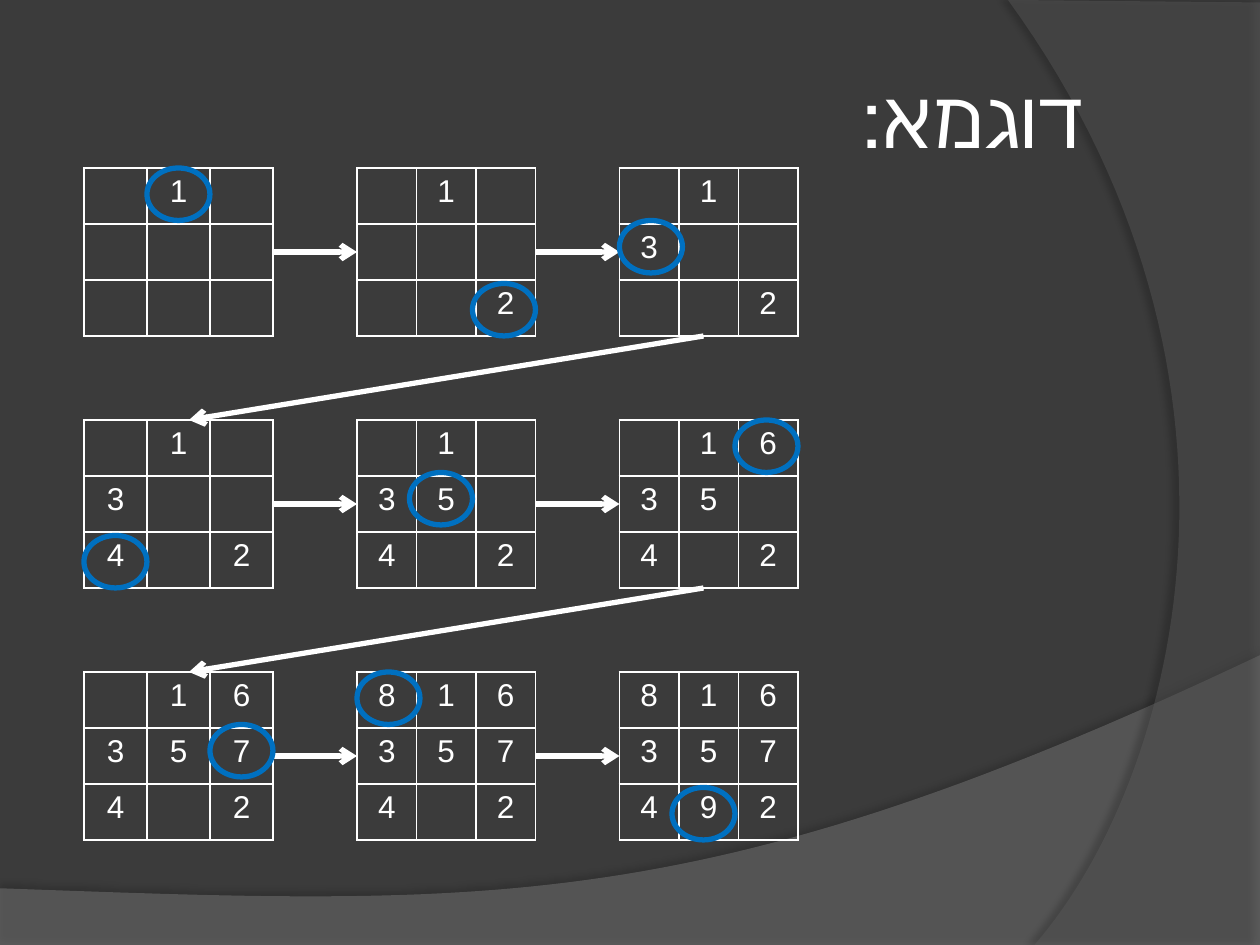
"""Build a slide that fills a three by three magic square one number at a time."""
import dataclasses
import typing

import lxml.etree
import pptx
import pptx.dml.color
import pptx.enum.shapes
import pptx.enum.text
import pptx.oxml
import pptx.oxml.ns
import pptx.util

Point = typing.Tuple[float, float]
GRID_COLUMNS, GRID_ROWS = 120, 90
SLIDE_WIDTH, SLIDE_HEIGHT = pptx.util.Inches(10), pptx.util.Inches(7.5)


@dataclasses.dataclass(frozen=True)
class Theme:
    background: str = "3B3B3B"
    wave: str = "7F7F7F"
    arc: str = "5E5E5E"
    shadow: str = "000000"
    ink: str = "FFFFFF"
    ring: str = "0070C0"
    font: str = "Arial"
    title_size: float = 46
    number_size: float = 18
    border_width: float = 1
    line_width: float = 3


@dataclasses.dataclass(frozen=True)
class Board:
    left: int
    top: int
    width: int
    count: int
    height: int = 16

    @property
    def right(self) -> int:
        return self.left + self.width

    @property
    def middle(self) -> int:
        return self.top + self.height // 2

    @property
    def bottom(self) -> int:
        return self.top + self.height


@dataclasses.dataclass(frozen=True)
class Backdrop:
    corners: typing.Tuple[Point, ...]
    curve: typing.Tuple[Point, Point, Point, Point]
    color: str
    alpha: int
    shadow_alpha: int
    shadow_distance: float
    shadow_angle: int


THEME = Theme()
BOARD_COLUMNS = ((8, 18), (34, 17), (59, 17))
BOARD_TOPS = (16, 40, 64)
NUMBER_CELLS = ((0, 1), (2, 2), (1, 0), (2, 0), (1, 1), (0, 2), (1, 2), (0, 0), (2, 1))
RING_WIDTH, RING_HEIGHT = 6, 5
BACKDROPS = (
    Backdrop(((0, 7.51), (10, 7.51)), ((10, 5.2), (5.59, 7.29), (3.91, 7.19), (0, 7.05)),
             THEME.wave, 45, 35, 3.5, 270),
    Backdrop(((10, 0.02), (10, 7.5)), ((8.21, 7.5), (9.35, 6.19), (10.18, 3), (8, 0)),
             THEME.arc, 40, 45, 4, 180),
)


def across(columns: float) -> int:
    return round(SLIDE_WIDTH * columns / GRID_COLUMNS)


def down(rows: float) -> int:
    return round(SLIDE_HEIGHT * rows / GRID_ROWS)


def rgb(color: str) -> pptx.dml.color.RGBColor:
    return pptx.dml.color.RGBColor.from_string(color)


def apply_format(target: typing.Any, values: typing.Dict[str, typing.Any]) -> None:
    for name, value in values.items():
        setattr(target, name, value)


def drawing_xml(markup: str) -> typing.Any:
    tag, rest = markup[:-1].split(">", 1) if ">" in markup[:-1] else (markup[:-2], "/")
    joint = ">" if rest != "/" else ""
    return pptx.oxml.parse_xml(f"{tag} {pptx.oxml.ns.nsdecls('a')}{joint}{rest}>")


def write_text(paragraph: typing.Any, text: str, size: float, alignment: typing.Any) -> None:
    paragraph.alignment = alignment
    run = paragraph.add_run()
    run.text = text
    apply_format(run.font, {"name": THEME.font, "size": pptx.util.Pt(size), "bold": False})
    run.font.color.rgb = rgb(THEME.ink)


def format_line(line: typing.Any, color: str) -> None:
    line.color.rgb = rgb(color)
    line.width = pptx.util.Pt(THEME.line_width)


def curve_points(curve: typing.Tuple[Point, ...], steps: int = 60) -> typing.List[Point]:
    points = []
    for step in range(steps + 1):
        t = step / steps
        weights = ((1 - t) ** 3, 3 * t * (1 - t) ** 2, 3 * t ** 2 * (1 - t), t ** 3)
        points.append(tuple(sum(w * p[axis] for w, p in zip(weights, curve)) for axis in (0, 1)))
    return points


def draw_backdrop(slide: typing.Any, backdrop: Backdrop) -> None:
    outline = [(pptx.util.Inches(x), pptx.util.Inches(y))
               for x, y in (*backdrop.corners, *curve_points(backdrop.curve))]
    builder = slide.shapes.build_freeform(*outline[0])
    builder.add_line_segments(outline[1:], close=True)
    shape = builder.convert_to_shape()
    shape.fill.solid()
    shape.fill.fore_color.rgb = rgb(backdrop.color)
    shape.line.fill.background()
    properties = shape._element.spPr
    fill_color = properties.find(f".//{pptx.oxml.ns.qn('a:srgbClr')}")
    fill_color.append(drawing_xml(f'<a:alpha val="{backdrop.alpha * 1000}"/>'))
    properties.append(drawing_xml(
        f'<a:effectLst><a:outerShdw blurRad="{pptx.util.Pt(4)}" '
        f'dist="{pptx.util.Pt(backdrop.shadow_distance)}" dir="{backdrop.shadow_angle * 60000}" '
        f'rotWithShape="0"><a:srgbClr val="{THEME.shadow}">'
        f'<a:alpha val="{backdrop.shadow_alpha * 1000}"/></a:srgbClr></a:outerShdw></a:effectLst>'))


def draw_title(slide: typing.Any, text: str) -> None:
    title = slide.shapes.title
    slide.shapes._spTree.append(title._element)
    apply_format(title, {"left": across(6), "top": down(3.6),
                         "width": across(98), "height": down(15)})
    margin = pptx.util.Inches(0.05)
    apply_format(title.text_frame, {
        "vertical_anchor": pptx.enum.text.MSO_ANCHOR.MIDDLE, "margin_left": margin,
        "margin_right": margin, "margin_top": margin, "margin_bottom": margin})
    paragraph = title.text_frame.paragraphs[0]
    write_text(paragraph, text, THEME.title_size, pptx.enum.text.PP_ALIGN.RIGHT)
    paragraph._p.get_or_add_pPr().set("rtl", "1")


def draw_board(slide: typing.Any, board: Board) -> None:
    table = slide.shapes.add_table(3, 3, across(board.left), down(board.top),
                                   across(board.width), down(board.height)).table
    apply_format(table, {"first_row": False, "horz_banding": False})
    for row in table.rows:
        row.height = down(board.height / 3)
    for cell in table.iter_cells():
        cell.fill.background()
        for index, side in enumerate(("lnL", "lnR", "lnT", "lnB")):
            cell._tc.get_or_add_tcPr().insert(index, drawing_xml(
                f'<a:{side} w="{pptx.util.Pt(THEME.border_width)}"><a:solidFill>'
                f'<a:srgbClr val="{THEME.ink}"/></a:solidFill></a:{side}>'))
    for number, position in enumerate(NUMBER_CELLS[:board.count], start=1):
        write_text(table.cell(*position).text_frame.paragraphs[0], str(number),
                   THEME.number_size, pptx.enum.text.PP_ALIGN.CENTER)


def draw_arrow(slide: typing.Any, start: Point, end: Point) -> None:
    arrow = slide.shapes.add_connector(
        pptx.enum.shapes.MSO_CONNECTOR.STRAIGHT,
        across(start[0]), down(start[1]), across(end[0]), down(end[1]))
    format_line(arrow.line, THEME.ink)
    arrow.line._get_or_add_ln().append(drawing_xml('<a:tailEnd type="arrow"/>'))
    lxml.etree.SubElement(arrow._element.spPr, pptx.oxml.ns.qn("a:effectLst"))


def draw_ring(slide: typing.Any, board: Board) -> None:
    row, column = NUMBER_CELLS[board.count - 1]
    left = board.left + column * (board.width - RING_WIDTH) // 2
    top = board.top + row * (board.height - RING_HEIGHT) // 2
    ring = slide.shapes.add_shape(pptx.enum.shapes.MSO_SHAPE.FLOWCHART_CONNECTOR, across(left),
                                  down(top), across(RING_WIDTH), down(RING_HEIGHT))
    ring.shadow.inherit = False
    ring.fill.background()
    format_line(ring.line, THEME.ring)


def main() -> None:
    presentation = pptx.Presentation()
    apply_format(presentation, {"slide_width": SLIDE_WIDTH, "slide_height": SLIDE_HEIGHT})
    slide = presentation.slides.add_slide(presentation.slide_layouts[5])
    slide.background.fill.solid()
    slide.background.fill.fore_color.rgb = rgb(THEME.background)
    for backdrop in BACKDROPS:
        draw_backdrop(slide, backdrop)
    draw_title(slide, "דוגמא:")
    boards = [Board(left, top, width, 3 * row + column + 1)
              for row, top in enumerate(BOARD_TOPS)
              for column, (left, width) in enumerate(BOARD_COLUMNS)]
    for board in boards:
        draw_board(slide, board)
    for board, following in zip(boards, boards[1:]):
        if board.top == following.top:
            draw_arrow(slide, (board.right, board.middle), (following.left, following.middle))
        else:
            draw_arrow(slide, (board.left + 8, board.bottom), (following.left + 10, following.top))
    for board in boards:
        draw_ring(slide, board)
    presentation.save("out.pptx")


if __name__ == "__main__":
    main()
